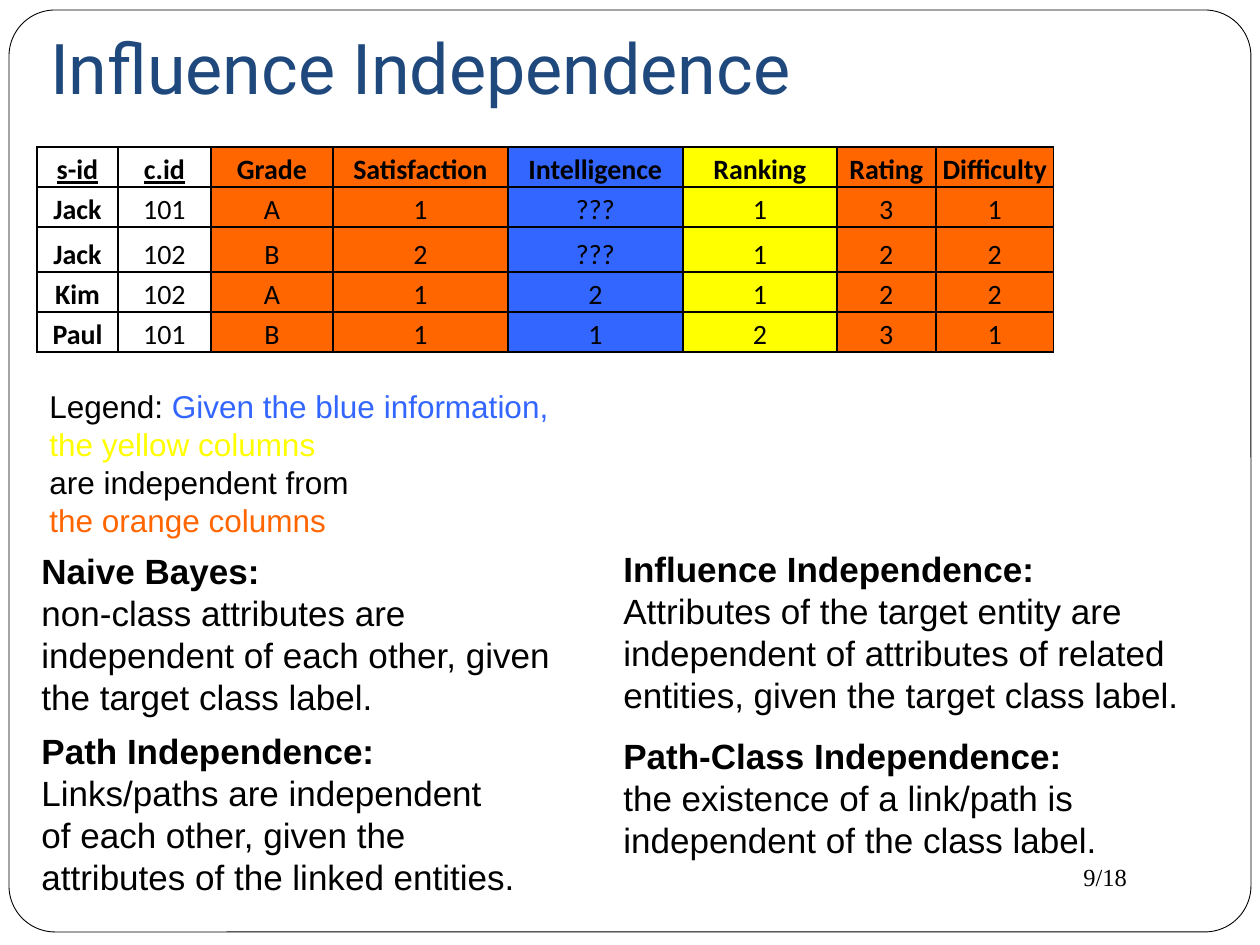
from lxml.etree import SubElement
from pptx import Presentation
from pptx.dml.color import RGBColor as RGB
from pptx.enum.shapes import MSO_SHAPE as SHAPE
from pptx.enum.text import MSO_ANCHOR as ANCHOR, PP_ALIGN as ALIGN
from pptx.oxml.ns import qn
from pptx.util import Emu, Pt

SCALE = 914400 / 126  # EMU in one px
COLORS = {
    "black": "000000", "white": "FFFFFF", "navy": "1F497D",
    "blue": "3366FF", "yellow": "FFFF00", "orange": "FF6600",
}

# heading, width, fill
COLUMNS = [
    ("s-id", 81, "white"), ("c.id", 93, "white"), ("Grade", 122, "orange"),
    ("Satisfaction", 175, "orange"), ("Intelligence", 175, "blue"),
    ("Ranking", 154, "yellow"), ("Rating", 99, "orange"),
    ("Difficulty", 118, "orange"),
]
ROWS = [
    ["Jack", "101", "A", "1", "???", "1", "3", "1"],
    ["Jack", "102", "B", "2", "???", "1", "2", "2"],
    ["Kim", "102", "A", "1", "2", "1", "2", "2"],
    ["Paul", "101", "B", "1", "1", "2", "3", "1"],
]
HEIGHTS = [40, 40, 45, 40, 40]
LEGEND = [
    [("Legend: ", "black"), ("Given the blue information,", "blue")],
    [("the yellow columns", "yellow")],
    [("are independent from", "black")],
    [("the orange columns", "orange")],
]
NOTIONS = [
    ((29, 543, 583, 183), "Naive Bayes:",
     "non-class attributes are independent of each other, "
     "given the target class label."),
    ((611, 541, 617, 183), "Influence Independence:",
     "Attributes of the target entity are independent of attributes "
     "of related entities, given the target class label."),
    ((29, 723, 500, 183), "Path Independence:",
     "Links/paths are independent of each other, given the "
     "attributes of the linked entities."),
    ((611, 728, 556, 140), "Path-Class Independence:",
     "the existence of a link/path is independent of the class label."),
]


def px(n):
    return Emu(round(n * SCALE))


def color(name):
    return RGB.from_string(COLORS[name])


class Board:
    """Holds the text style and the slide being drawn."""

    def __init__(self, slide, font="Arial"):
        self.slide = slide
        self.shapes = slide.shapes
        self.font = font

    def style(self, para, size, tint="black", font=None, bold=False):
        face = para.font
        face.name, face.size, face.bold = font or self.font, Pt(size), bold
        face.color.rgb = color(tint)

    def frame(self, box, radius):
        shape = self.shapes.add_shape(SHAPE.ROUNDED_RECTANGLE, *map(px, box))
        shape.adjustments[0] = radius
        shape.shadow.inherit = False
        shape.fill.solid()
        shape.fill.fore_color.rgb = color("white")
        shape.line.color.rgb = color("black")
        shape.line.width = Pt(0.5)

    def title(self, box, text):
        shape = self.shapes.title
        shape.left, shape.top, shape.width, shape.height = map(px, box)
        frame = shape.text_frame
        frame.text = text
        frame.vertical_anchor = ANCHOR.BOTTOM
        frame.margin_left = frame.margin_right = frame.margin_bottom = px(13)
        para = frame.paragraphs[0]
        para.alignment = ALIGN.LEFT
        self.style(para, 40, "navy", "Roboto")
        self.shapes._spTree.append(shape._element)  # in front of the frame

    def text(self, box, lines, size, font=None, head=False):
        """Write lines of (text, colour) runs; head makes the first bold."""
        frame = self.shapes.add_textbox(*map(px, box)).text_frame
        frame.word_wrap = True
        for i, runs in enumerate(lines):
            para = frame.add_paragraph() if i else frame.paragraphs[0]
            self.style(para, size, font=font, bold=head and i == 0)
            for words, tint in runs:
                run = para.add_run()
                run.text = words
                run.font.color.rgb = color(tint)

    def table(self, left, top, columns, rows, heights):
        names, widths, fills = zip(*columns)
        box = (left, top, sum(widths), sum(heights))
        grid = self.shapes.add_table(
            len(heights), len(widths), *map(px, box)).table
        for col, width in zip(grid.columns, widths):
            col.width = px(width)
        for r, (words, height) in enumerate(zip([names, *rows], heights)):
            grid.rows[r].height = px(height)
            for c, word in enumerate(words):
                cell = grid.cell(r, c)
                self.cell(cell, word, fills[c], bold=r == 0 or c == 0)
                if r == 0 and c < 2:
                    cell.text_frame.paragraphs[0].font.underline = True

    def cell(self, cell, word, fill, bold):
        cell.text = word
        cell.vertical_anchor = ANCHOR.BOTTOM
        cell.margin_left = cell.margin_right = cell.margin_top = px(1)
        cell.margin_bottom = 0
        para = cell.text_frame.paragraphs[0]
        para.alignment = ALIGN.CENTER
        para.line_spacing = 1.15
        para.space_after = Pt(10)
        self.style(para, 16, font="Calibri", bold=bold)
        self.border(cell)
        cell.fill.solid()
        cell.fill.fore_color.rgb = color(fill)

    def border(self, cell):
        props = cell._tc.get_or_add_tcPr()
        for side in ("lnL", "lnR", "lnT", "lnB"):
            line = SubElement(props, qn(f"a:{side}"), w=str(Pt(1)))
            fill = SubElement(line, qn("a:solidFill"))
            SubElement(fill, qn("a:srgbClr"), val=COLORS["black"])


def main():
    deck = Presentation()
    deck.slide_width, deck.slide_height = px(1260), px(945)
    board = Board(deck.slides.add_slide(deck.slide_layouts[5]))
    board.frame((9, 10, 1242, 922), 0.05)
    board.text((1071, 856, 126, 43), [[("9/18", "black")]], 14,
               "Times New Roman")
    for box, name, claim in NOTIONS:
        board.text(box, [[(name, "black")], [(claim, "black")]], 20, head=True)
    board.table(37, 147, COLUMNS, ROWS, HEIGHTS)
    board.text((37, 381, 1057, 165), LEGEND, 18)
    board.title((37, 38, 1193, 84), "Influence Independence")
    deck.save("out.pptx")


if __name__ == "__main__":
    main()
